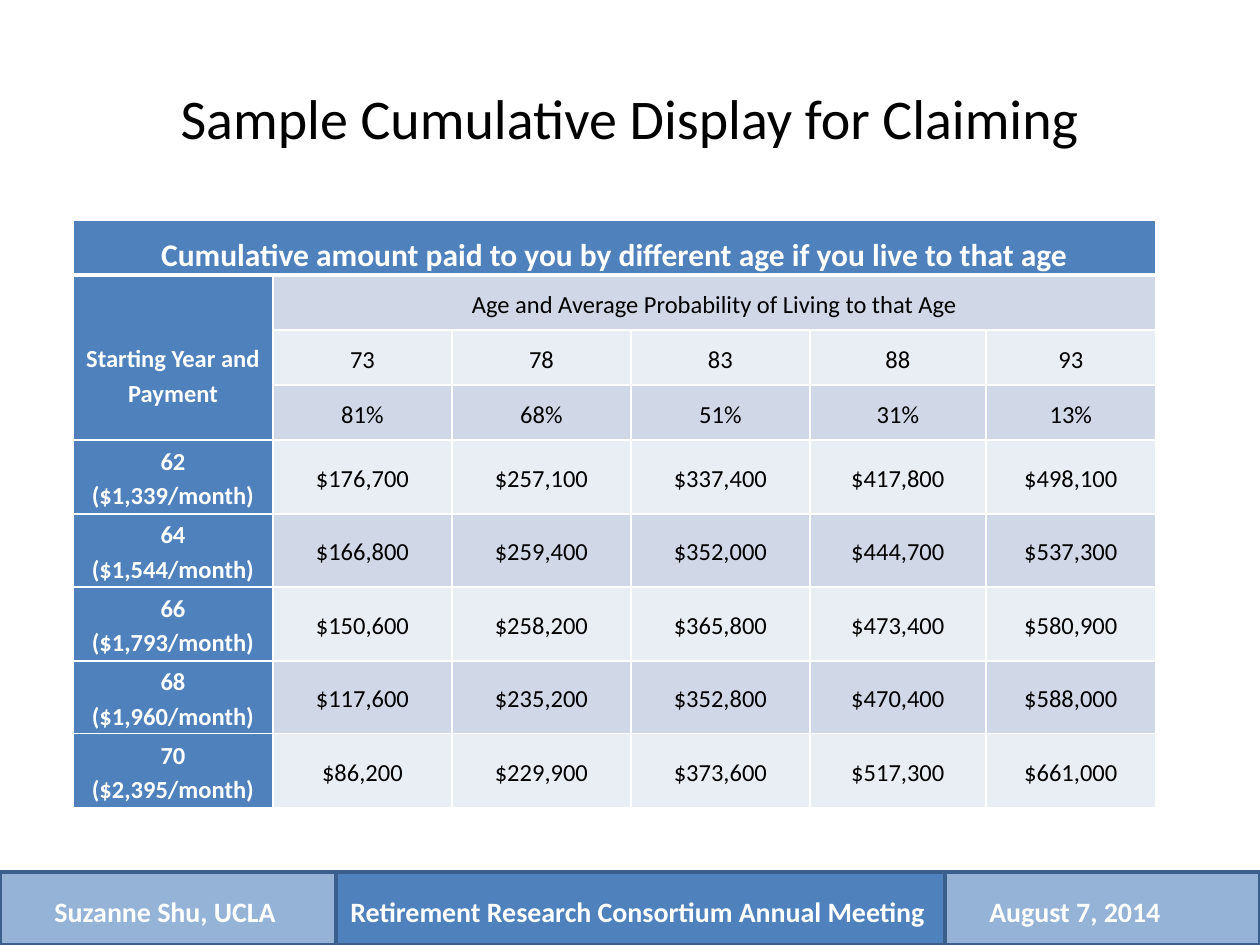
import pptx
import pptx.util
import pptx.dml.color
import pptx.enum.shapes
import pptx.enum.text
import pptx.oxml
import pptx.oxml.ns

SCALE = 914400 / 126
BLUE, PALE, EDGE = "4F81BD", "95B3D7", "3A5F8C"
WHITE, BLACK = "FFFFFF", "000000"
BANDS = ["D0D8E8", "E9EDF4"]
ANCHOR = pptx.enum.text.MSO_ANCHOR
ALIGN = pptx.enum.text.PP_ALIGN

HEAD = "Cumulative amount paid to you by different age if you live to that age"
SIDE = "Starting Year and Payment"
SPAN = "Age and Average Probability of Living to that Age"
ROWS = [
    [HEAD],
    [SIDE, SPAN],
    ["", "73", "78", "83", "88", "93"],
    ["", "81%", "68%", "51%", "31%", "13%"],
    ["62 ($1,339/month)", "$176,700", "$257,100", "$337,400", "$417,800", "$498,100"],
    ["64 ($1,544/month)", "$166,800", "$259,400", "$352,000", "$444,700", "$537,300"],
    ["66 ($1,793/month)", "$150,600", "$258,200", "$365,800", "$473,400", "$580,900"],
    ["68 ($1,960/month)", "$117,600", "$235,200", "$352,800", "$470,400", "$588,000"],
    ["70 ($2,395/month)", "$86,200", "$229,900", "$373,600", "$517,300", "$661,000"],
]
WIDTHS = [200, 179, 179, 179, 176, 170]
HEIGHTS = [55, 55, 55, 55, 74, 73, 74, 73, 74]


def px(num):
    """Turn pixels into EMU."""
    return pptx.util.Emu(round(num * SCALE))


def paint(color, code):
    """Give a fill's or font's colour format a hex colour."""
    color.rgb = pptx.dml.color.RGBColor.from_string(code)


def write(frame, text, size, code, bold=False, align=ALIGN.CENTER, space=1.0):
    """Fill a text frame with one styled paragraph."""
    frame.text = text
    para = frame.paragraphs[0]
    para.alignment = align
    para.line_spacing = space
    for run in para.runs:
        run.font.name = "Calibri"
        run.font.size = pptx.util.Pt(size)
        run.font.bold = bold
        paint(run.font.color, code)


def label(slide, box, text, size, code, **style):
    """Add a text box in the given box."""
    frame = slide.shapes.add_textbox(*map(px, box)).text_frame
    write(frame, text, size, code, **style)
    return frame


def title(slide, box):
    """Place the slide title."""
    frame = label(slide, box, "Sample Cumulative Display for Claiming", 32, BLACK)
    frame.word_wrap = True
    frame.vertical_anchor = ANCHOR.MIDDLE


def border(cell, widths):
    """Draw white borders; widths map sides to points."""
    props = cell._tc.get_or_add_tcPr()
    for side, width in widths.items():
        props.append(pptx.oxml.parse_xml(
            f'<a:ln{side} {pptx.oxml.ns.nsdecls("a")} w="{pptx.util.Pt(width)}">'
            f'<a:solidFill><a:srgbClr val="{WHITE}"/></a:solidFill></a:ln{side}>'))


def grid(slide, box):
    """Place the table of cumulative payments."""
    shape = slide.shapes.add_table(len(ROWS), len(WIDTHS), *map(px, box))
    table = shape.table
    for col, width in zip(table.columns, WIDTHS):
        col.width = px(width)
    for row, height in zip(table.rows, HEIGHTS):
        row.height = px(height)
    for r, row in enumerate(ROWS):
        for c in range(len(WIDTHS)):
            cell = table.cell(r, c)
            dark = r == 0 or c == 0
            border(cell, {"L": 1, "R": 1, "T": 3 if r == 1 else 1, "B": 3 if r == 0 else 1})
            cell.fill.solid()
            paint(cell.fill.fore_color, BLUE if dark else BANDS[(r + 1) % 2])
            cell.margin_left = cell.margin_right = px(9)
            cell.margin_top = cell.margin_bottom = 0
            cell.vertical_anchor = ANCHOR.MIDDLE if r else ANCHOR.BOTTOM
            if c < len(row) and row[c]:
                write(cell.text_frame, row[c], 14 if r else 18,
                      WHITE if dark else BLACK, bold=dark, space=1.15)
    table.cell(1, 0).margin_top = px(34)
    for top, left, end, last in [(0, 0, 0, 5), (1, 0, 3, 0), (1, 1, 1, 5)]:
        table.cell(top, left).merge(table.cell(end, last))


def footer(slide, box):
    """Place the three footer bars and their labels."""
    left, top, _, high = box
    parts = [
        (0, 336, PALE, 42, 251, "Suzanne Shu, UCLA"),
        (935, 325, PALE, 977, 199, "August 7, 2014"),
        (336, 609, BLUE, 338, 607, "Retirement Research Consortium Annual Meeting"),
    ]
    rect = pptx.enum.shapes.MSO_SHAPE.RECTANGLE
    for x, wide, code, *_ in parts:
        bar = slide.shapes.add_shape(rect, *map(px, (left + x, top, wide, high)))
        bar.shadow.inherit = False
        bar.fill.solid()
        paint(bar.fill.fore_color, code)
        paint(bar.line.color, EDGE)
        bar.line.width = pptx.util.Pt(2)
    for *_, x, wide, text in parts:
        frame = label(slide, (left + x, top + 16, wide, 47), text, 16, WHITE,
                      bold=True, align=ALIGN.LEFT)
        frame.word_wrap = False


def main():
    """Build and save the slide."""
    deck = pptx.Presentation()
    deck.slide_width, deck.slide_height = px(1260), px(945)
    slide = deck.slides.add_slide(deck.slide_layouts[6])
    footer(slide, (0, 872, 1260, 73))
    title(slide, (63, 38, 1134, 158))
    grid(slide, (73, 220, sum(WIDTHS), sum(HEIGHTS)))
    deck.save("out.pptx")


if __name__ == "__main__":
    main()
